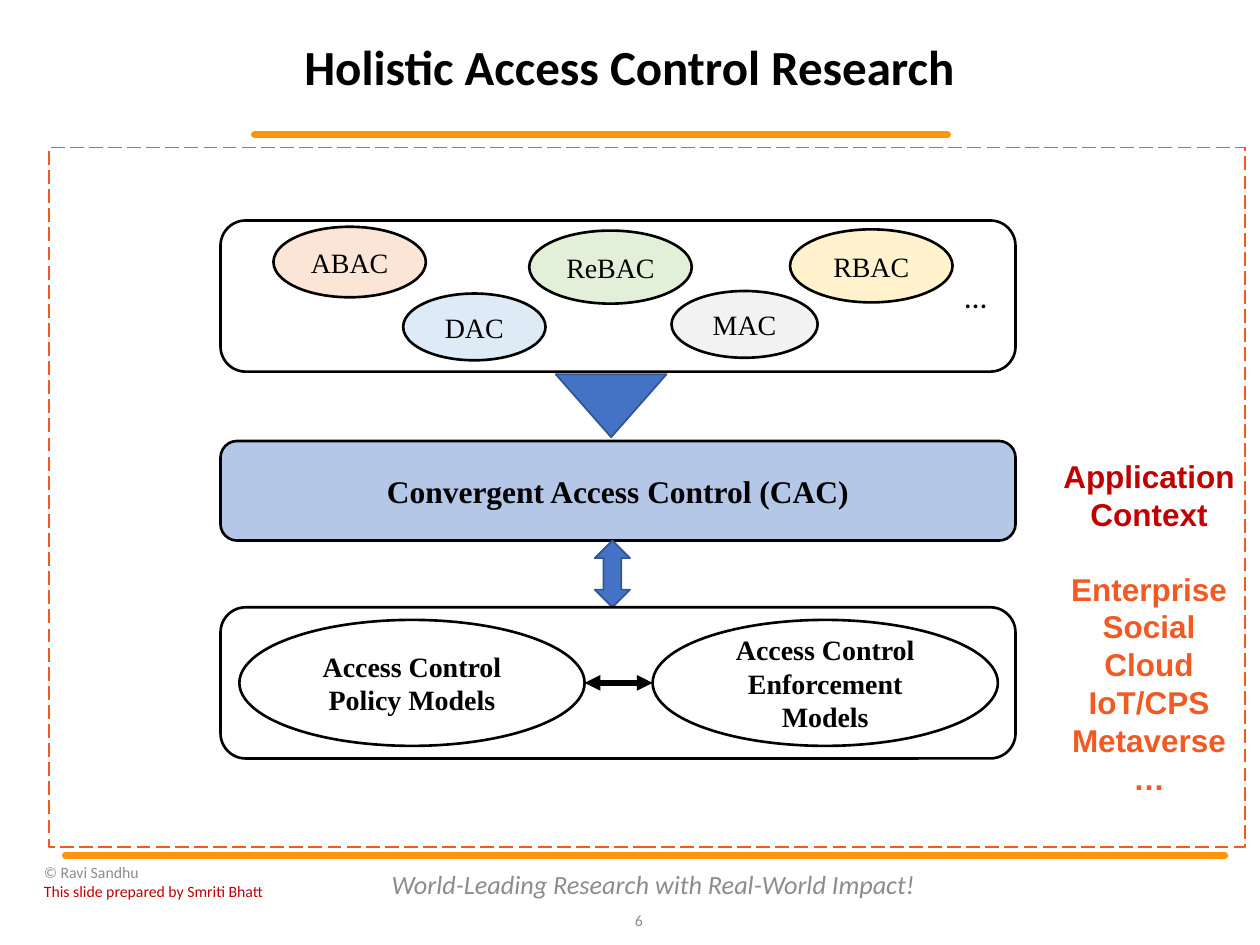
from lxml.etree import SubElement as Sub
from pptx import Presentation
from pptx.dml.color import RGBColor as Rgb
from pptx.enum.dml import MSO_LINE as Dash
from pptx.enum.shapes import MSO_CONNECTOR as Link, MSO_SHAPE as Kind
from pptx.enum.text import MSO_ANCHOR as Anchor, PP_ALIGN as Align
from pptx.oxml.ns import qn
from pptx.util import Inches, Pt

# The slide is a grid of 100 columns by 75 rows
COLS, ROWS = 100, 75
CELL = Inches(0.1)

HUES = {
    "ink": "000000", "white": "FFFFFF", "gray": "8C8C8C", "red": "C00000",
    "rule": "FF950E", "frame": "F15A22", "blue": "4472C4", "edge": "325491",
    "band": "B4C7E7", "peach": "FBE5D6", "green": "E2F0D9",
    "cream": "FFF2CC", "sky": "DEEBF7", "pale": "F2F2F2",
}
SERIF, SANS, BODY = "Times New Roman", "Arial", "Calibri"


def hue(name):
    return Rgb.from_string(HUES[name])


def spot(box, x, y, w, h):
    """Box at column x and row y of another box."""
    return box[0] + x, box[1] + y, w, h


def size(*cells):
    return [round(n * CELL) for n in cells]


def write(shape, lines, color="ink", align=Align.CENTER, wrap=True, **font):
    """Fill a shape with lines; a line may be a (text, color) pair."""
    frame = shape.text_frame
    frame.word_wrap = wrap
    frame.vertical_anchor = Anchor.MIDDLE
    for i, line in enumerate(lines):
        text, tone = line if isinstance(line, tuple) else (line, color)
        para = frame.paragraphs[0] if i == 0 else frame.add_paragraph()
        para.text = text
        para.alignment = align
        for key, val in font.items():
            setattr(para.font, key, val)
        para.font.color.rgb = hue(tone)
    return frame


def draw(slide, kind, box, fill=None, line="ink", width=1.5):
    shape = slide.shapes.add_shape(kind, *size(*box))
    shape.shadow.inherit = False
    if fill:
        shape.fill.solid()
        shape.fill.fore_color.rgb = hue(fill)
    else:
        shape.fill.background()
    if line:
        shape.line.color.rgb = hue(line)
        shape.line.width = Pt(width)
    else:
        shape.line.fill.background()
    return shape


def label(slide, box, lines, **style):
    return write(slide.shapes.add_textbox(*size(*box)), lines, **style)


def rule(slide, x1, x2, y, color, width):
    line = slide.shapes.add_connector(Link.STRAIGHT, *size(x1, y, x2, y))
    line.line.color.rgb = hue(color)
    line.line.width = Pt(width)
    Sub(line._element.spPr, qn("a:effectLst"))
    return line.line._get_or_add_ln()


def head(slide, box):
    """Title with the rule below it."""
    title = slide.shapes.title
    title.left, title.top, title.width, title.height = size(*box)
    frame = write(title, ["Holistic Access Control Research"],
                  name=BODY, size=Pt(28), bold=True)
    for side in ("left", "top", "right", "bottom"):
        setattr(frame, f"margin_{side}", 0)
    frame.paragraphs[0].line_spacing = 0.9
    rule(slide, 20.2, 75.2, 10.7, "rule", 4).set("cap", "rnd")


def foot(slide, box):
    """Rule, credit, motto and page number."""
    x, y, w, h = box
    rule(slide, x + 2.7, x + w, y - 0.3, "rule", 4).set("cap", "rnd")
    small = {"name": BODY, "size": Pt(9)}
    label(slide, spot(box, 0, 0, 27.5, 3.6),
          [("© Ravi Sandhu", "gray"),
           ("This slide prepared by Smriti Bhatt", "red")],
          align=Align.LEFT, **small)
    label(slide, spot(box, 27.5, 0, 43.7, 4),
          ["World-Leading Research with Real-World Impact!"],
          color="gray", name=BODY, size=Pt(15), italic=True)
    label(slide, spot(box, 45.5, 2.8, 4, 4), ["6"],
          color="gray", align=Align.RIGHT, **small)


def kinds(slide, box):
    """Known access control models."""
    draw(slide, Kind.ROUNDED_RECTANGLE, box)
    for text, fill, *place in (
        ("ABAC", "peach", 4.2, 0.5, 12.1, 5.6),
        ("ReBAC", "green", 24.5, 0.8, 12.9, 5.8),
        ("RBAC", "cream", 45.2, 0.7, 12.9, 5.8),
        ("DAC", "sky", 14.5, 5.8, 11.3, 5.3),
        ("MAC", "pale", 35.8, 5.6, 11.6, 5.3),
    ):
        oval = draw(slide, Kind.OVAL, spot(box, *place), fill)
        write(oval, [text], name=SERIF, size=Pt(16))
    label(slide, spot(box, 58.1, 4, 4.4, 4), ["…"],
          align=Align.LEFT, name=BODY, size=Pt(18))


def core(slide, box):
    """Convergent band with the arrows above and below."""
    band = draw(slide, Kind.ROUNDED_RECTANGLE, box, "band")
    write(band, ["Convergent Access Control (CAC)"],
          name=SERIF, size=Pt(18), bold=True)
    wedge = draw(slide, Kind.UP_ARROW, spot(box, 26.6, -5.3, 8.8, 5),
                 "blue", "edge", 1)
    wedge.rotation = 180
    wedge.adjustments[1] = 1.55
    draw(slide, Kind.UP_DOWN_ARROW, spot(box, 29.7, box[3], 2.8, 5.3),
         "blue", "edge", 1)


def pair(slide, box):
    """Policy and enforcement models, linked both ways."""
    draw(slide, Kind.ROUNDED_RECTANGLE, box)
    x, y, w, h = box
    wide, gap = 27.4, 5.4
    start = 1.5
    for i, word in enumerate(("Policy", "Enforcement")):
        place = spot(box, start + i * (wide + gap), 1, wide, h - 2)
        write(draw(slide, Kind.OVAL, place), [f"Access Control {word} Models"],
              name=SERIF, size=Pt(16), bold=True)
    left = x + start + wide
    line = rule(slide, left, left + gap, y + h / 2, "ink", 3)
    for end in ("headEnd", "tailEnd"):
        Sub(line, qn(f"a:{end}"), type="triangle")


def scope(slide, box):
    """Dashed frame with the application contexts on its right."""
    draw(slide, Kind.RECTANGLE, box, None, "frame",
         1).line.dash_style = Dash.LONG_DASH
    panel = draw(slide, Kind.ROUNDED_RECTANGLE,
                 spot(box, box[2] - 15.1, 35.6, 15, 4.9), "white", None)
    frame = write(panel, [("Application", "red"), ("Context", "red"),
                          "Enterprise", "Social\vCloud", "IoT/CPS",
                          "Metaverse", "…"],
                  color="frame", wrap=False, name=SANS, size=Pt(18), bold=True)
    frame.paragraphs[2].space_before = Pt(21)


def main():
    deck = Presentation()
    deck.slide_width, deck.slide_height = size(COLS, ROWS)
    slide = deck.slides.add_slide(deck.slide_layouts[5])
    head(slide, (23.7, 3, 52.5, 5.1))
    kinds(slide, (17.5, 17.5, 63.1, 12))
    core(slide, (17.5, 35, 63.1, 7.9))
    pair(slide, (17.5, 48.2, 63.1, 12))
    scope(slide, (3.9, 11.7, 94.9, 55.5))
    foot(slide, (2.5, 68.2, 94.7, 6.8))
    deck.save("out.pptx")


if __name__ == "__main__":
    main()
